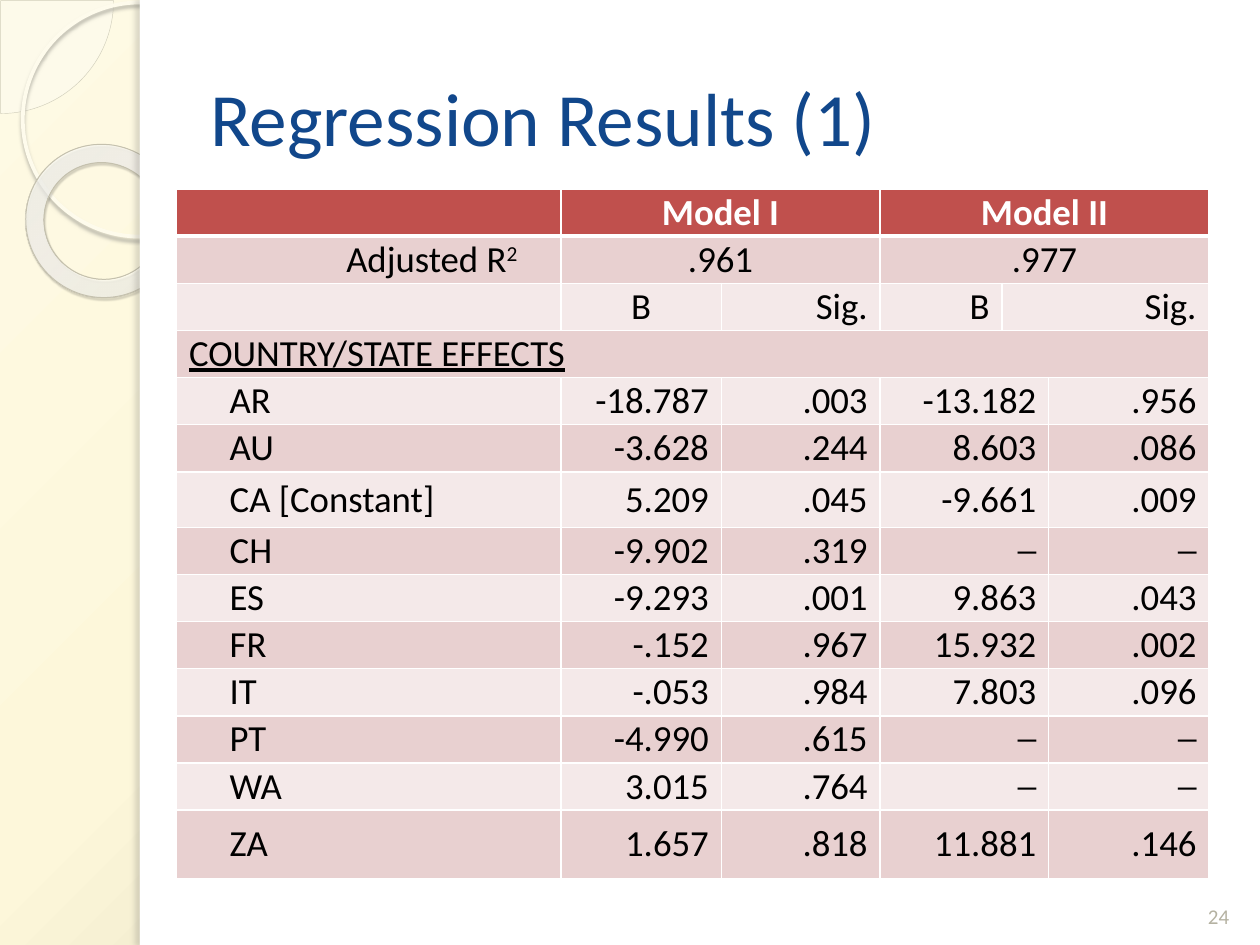
from lxml import etree
from pptx import Presentation
from pptx import util as u
from pptx.dml.color import RGBColor
from pptx.enum import shapes, text
from pptx.oxml import parse_xml
from pptx.oxml.ns import nsdecls, qn

# Content
TITLE = "Regression Results (1)"
PAGE_NUMBER = "24"
MODELS = [("Model I", ".961"), ("Model II", ".977")]
SECTION = "COUNTRY/STATE EFFECTS"
EFFECTS = [
    ("AR", "-18.787", ".003", "-13.182", ".956"),
    ("AU", "-3.628", ".244", "8.603", ".086"),
    ("CA [Constant]", "5.209", ".045", "-9.661", ".009"),
    ("CH", "-9.902", ".319", "─", "─"),
    ("ES", "-9.293", ".001", "9.863", ".043"),
    ("FR", "-.152", ".967", "15.932", ".002"),
    ("IT", "-.053", ".984", "7.803", ".096"),
    ("PT", "-4.990", ".615", "─", "─"),
    ("WA", "3.015", ".764", "─", "─"),
    ("ZA", "1.657", ".818", "11.881", ".146"),
]

THEME = {
    "font": "Calibri", "title_size": 43, "table_size": 21, "number_size": 12,
    "title": "11478B", "number": "B5B2A2", "text": "000000", "white": "FFFFFF",
    "header": "C0504D", "bands": ("F4E9E9", "E8D0D0"),
    "pie": "FDFDF9", "pie_line": "D1CEBB", "ring_line": "FEFBEC", "donut_line": "C5C1AE",
    "background": [(0, "FEFAE4", 100), (40, "FDF7DA", 100), (100, "C2BDA3", 100)],
    "donut": [(0, "FEFDFA", 70), (70, "FFFFFC", 55), (100, "E2DBB7", 60)],
}

# Table grid in cm
COLUMNS = [7.75, 3.23, 3.2, 2.46, 0.94, 3.23]
ROW, TALL_ROWS = 0.95, {6: 1.12, 13: 1.38}
PAD, INDENT = 0.25, 1.07
LEFT, CENTER, RIGHT = text.PP_ALIGN.LEFT, text.PP_ALIGN.CENTER, text.PP_ALIGN.RIGHT


def color(name):
    return RGBColor.from_string(THEME.get(name, name))


def gradient(stops, focus):
    """Circular gradient; focus is left, top, right, bottom in percent."""
    marks = "".join(
        f'<a:gs pos="{place * 1000}"><a:srgbClr val="{rgb}">'
        f'<a:alpha val="{alpha * 1000}"/></a:srgbClr></a:gs>' for place, rgb, alpha in stops)
    sides = " ".join(f'{side}="{value * 1000}"' for side, value in zip("ltrb", focus))
    return parse_xml(
        f'<a:gradFill {nsdecls("a")} rotWithShape="1"><a:gsLst>{marks}</a:gsLst>'
        f'<a:path path="circle"><a:fillToRect {sides}/></a:path></a:gradFill>')


def use_gradient(holder, stops, focus):
    solid = holder.find(qn("a:solidFill"))
    holder.replace(solid, gradient(stops, focus))


def add_figure(page, kind, area, fill=None, line=None, shadow=None):
    figure = page.shapes.add_shape(kind, *map(u.Cm, area))
    figure.shadow.inherit = False
    if fill:
        figure.fill.solid()
        figure.fill.fore_color.rgb = color(fill)
    else:
        figure.fill.background()
    if line:
        figure.line.color.rgb = color(line[0])
        figure.line.width = u.Pt(line[1])
    else:
        figure.line.fill.background()
    if shadow:
        rgb, alpha, blur, distance, angle = shadow
        effects = figure.element.spPr.find(qn("a:effectLst"))
        effects.append(parse_xml(
            f'<a:outerShdw {nsdecls("a")} blurRad="{u.Pt(blur)}" dist="{u.Pt(distance)}" '
            f'dir="{angle * 60000}" algn="tl" rotWithShape="0"><a:srgbClr val="{rgb}">'
            f'<a:alpha val="{alpha * 1000}"/></a:srgbClr></a:outerShdw>'))
    return figure


def add_span(para, words, size, ink, bold=False, underline=False, raised=False):
    span = para.add_run()
    span.text = words
    span.font.name, span.font.size = THEME["font"], u.Pt(THEME[size])
    span.font.color.rgb = color(ink)
    span.font.bold, span.font.underline = bold, underline
    if raised:
        span.font._element.set("baseline", "30000")


def add_label(page, words, area, anchor, align, size, ink):
    box = page.shapes.add_textbox(*map(u.Cm, area))
    box.text_frame.word_wrap = True
    box.text_frame.vertical_anchor = anchor
    para = box.text_frame.paragraphs[0]
    para.alignment = align
    add_span(para, words, size, ink)


def set_borders(cell, row):
    widths = {"lnL": 1, "lnR": 1, "lnT": 3 if row == 1 else 1, "lnB": 3 if row == 0 else 1}
    props = cell._tc.get_or_add_tcPr()
    for place, (tag, width) in enumerate(widths.items()):
        border = etree.Element(qn(f"a:{tag}"), w=str(u.Pt(width)))
        fill = etree.SubElement(border, qn("a:solidFill"))
        etree.SubElement(fill, qn("a:srgbClr"), val=THEME["white"])
        props.insert(place, border)


def write(table, row, column, words, align=RIGHT, last=None, ink="text", **style):
    """Write one cell, merged through column `last` when given."""
    cell = table.cell(row, column)
    if last:
        cell.merge(table.cell(row, last))
    para = cell.text_frame.paragraphs[0]
    para.alignment = align
    add_span(para, words, "table_size", ink, **style)
    return cell


def add_decoration(page):
    add_figure(page, shapes.MSO_SHAPE.RECTANGLE, (2.82, 0, 0.2, 19.05), "white",
               shadow=("77756F", 25, 3, 3, 180))
    add_figure(page, shapes.MSO_SHAPE.RECTANGLE, (2.82, 0, 22.58, 19.05), "white")


def add_circles(page):
    pie = add_figure(page, shapes.MSO_SHAPE.PIE, (-2.26, -2.26, 4.55, 4.55), "pie", ("pie_line", 0.25))
    pie.adjustments[0], pie.adjustments[1] = 0, 54
    tint = pie.element.spPr.find(qn("a:solidFill"))[0]
    etree.SubElement(tint, qn("a:alpha"), val="33000")
    add_figure(page, shapes.MSO_SHAPE.OVAL, (0.46, 0.05, 4.72, 4.72), line=("ring_line", 2.15),
               shadow=("B2B0A4", 85, 2, 2, 90))
    donut = add_figure(page, shapes.MSO_SHAPE.DONUT, (0.51, 2.92, 3.12, 3.07), "white",
                       ("donut_line", 0.58), ("5A5850", 35, 1, 1.2, 75))
    donut.adjustments[0] = 0.12
    donut.rotation = 38.6
    use_gradient(donut.element.spPr, THEME["donut"], (-408, -50, 508, 150))


def add_results(page):
    heights = [TALL_ROWS.get(row, ROW) for row in range(4 + len(EFFECTS))]
    table = page.shapes.add_table(
        len(heights), len(COLUMNS), u.Cm(3.56), u.Cm(3.81),
        u.Cm(sum(COLUMNS)), u.Cm(sum(heights))).table
    for column, width in zip(table.columns, COLUMNS):
        column.width = u.Cm(width)
    for row, height in enumerate(heights):
        table.rows[row].height = u.Cm(height)
        for cell in table.rows[row].cells:
            cell.margin_left = cell.margin_right = u.Cm(PAD)
            cell.margin_top = cell.margin_bottom = 0
            cell.vertical_anchor = text.MSO_ANCHOR.MIDDLE
            cell.fill.solid()
            cell.fill.fore_color.rgb = color(THEME["bands"][row % 2] if row else "header")
            set_borders(cell, row)

    # Headings
    for (name, fit), (first, last) in zip(MODELS, [(1, 2), (3, 5)]):
        write(table, 0, first, name, CENTER, last, "white", bold=True)
        write(table, 1, first, fit, CENTER, last)
    fit_label = write(table, 1, 0, "Adjusted R")
    fit_label.margin_right = u.Cm(0.88)
    add_span(fit_label.text_frame.paragraphs[0], "2", "table_size", "text", raised=True)
    write(table, 2, 1, "B", CENTER)
    write(table, 2, 2, "Sig.")
    write(table, 2, 3, "B")
    write(table, 2, 4, "Sig.", last=5)
    write(table, 3, 0, SECTION, LEFT, 5, underline=True)

    # Effects
    for row, (place, *values) in enumerate(EFFECTS, start=4):
        write(table, row, 0, place, LEFT).margin_left = u.Cm(INDENT)
        for value, (column, last) in zip(values, [(1, None), (2, None), (3, 4), (5, None)]):
            write(table, row, column, value, last=last)


def main():
    deck = Presentation()
    deck.slide_width, deck.slide_height = u.Cm(25.4), u.Cm(19.05)
    page = deck.slides.add_slide(deck.slide_layouts[6])
    page.background.fill.solid()
    use_gradient(page.element.find(".//" + qn("p:bgPr")), THEME["background"], (-24, -20, 124, 120))
    add_circles(page)
    add_decoration(page)
    add_label(page, TITLE, (3.99, 0.76, 20.83, 3.18), text.MSO_ANCHOR.MIDDLE, LEFT, "title_size", "title")
    add_results(page)
    add_label(page, PAGE_NUMBER, (23.93, 17.53, 1.27, 1.32), text.MSO_ANCHOR.BOTTOM, CENTER,
              "number_size", "number")
    deck.save("out.pptx")


if __name__ == "__main__":
    main()
